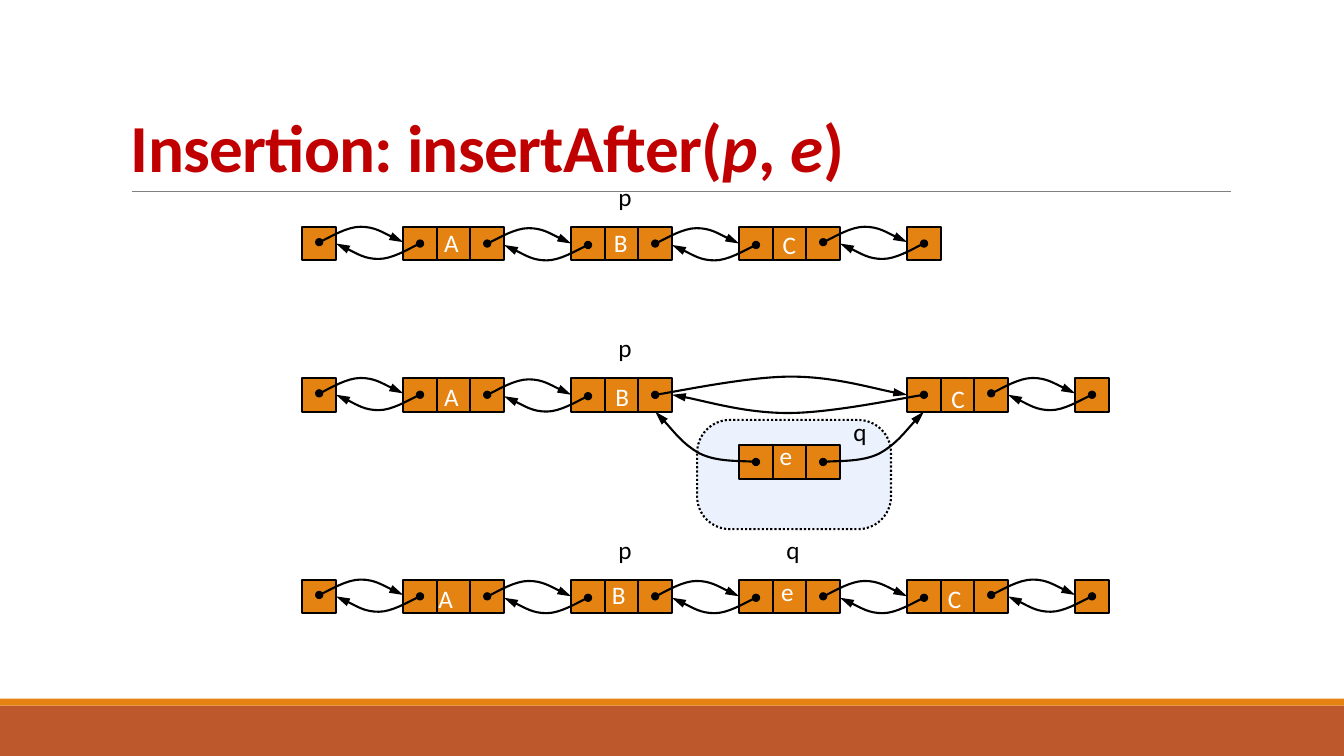
from lxml import etree
from pptx import Presentation
from pptx.dml.color import RGBColor
from pptx.enum import dml, shapes, text
from pptx.oxml import ns
from pptx.util import Pt

COLORS = {"red": "C00000", "orange": "E48312", "rust": "BD582C", "rule": "808080",
          "bubble": "ECF1FE", "black": "000000", "white": "FFFFFF"}
FONT = "Calibri"
CELL = 24
NODE = 3 * CELL
HEAD_LEFT = 216
GAP = 48

# Link curves as offsets from their start: two cubic segments each
HOP = [(5, -2), (20, -11), (29.5, -11), (39.5, -11), (54, -2.5), (60, 0)]
LONG_HOP = [(16.5, -2.5), (67, -13), (97, -13), (127, -13), (163, -2.5), (180, 0)]
NEW_LINK = [(6.5, -1), (28, 0), (40, -6), (52, -12.5), (65.5, -30), (72, -36)]

# Each row: top, nodes (letter, left, letter offset x, y), tail left, markers
ROWS = [
    (162, [("A", 288, 20, -3), ("B", 408, 21, -3.5), ("C", 528, 21.5, -1.5)],
     648, [("p", 432)]),
    (270, [("A", 288, 20, -1.5), ("B", 408, 22, -1.5), ("C", 648, 22, 0)],
     768, [("p", 432)]),
    (414, [("A", 288, 16, -1), ("B", 408, 19.5, -3.5), ("e", 528, 20, -6),
           ("C", 648, 19.5, -1)],
     768, [("p", 432), ("q", 552)]),
]
NEW_LEFT, NEW_TOP = 528, 318


def color(name):
    return RGBColor.from_string(COLORS[name])


def add_link(x, y, offsets, x_sign=1, y_sign=1):
    """Draw a curved arrow with a dot at its start."""
    points = [(Pt(x + x_sign * dx), Pt(y + y_sign * dy)) for dx, dy in offsets]
    builder = slide.shapes.build_freeform(Pt(x), Pt(y))
    builder.add_line_segments(points, close=False)
    link = builder.convert_to_shape()
    link.shadow.inherit = False
    link.fill.background()
    link.line.color.rgb = color("black")
    link.line.width = Pt(1.5)
    outline = link.line._get_or_add_ln()
    etree.SubElement(outline, ns.qn("a:headEnd"), type="oval")
    etree.SubElement(outline, ns.qn("a:tailEnd"), type="triangle", len="lg")
    # Turn every three straight segments into one cubic segment
    segments = link._element.xpath(".//a:lnTo")
    outline_path = segments[0].getparent()
    for first in range(0, len(segments), 3):
        cubic = etree.SubElement(outline_path, ns.qn("a:cubicBezTo"))
        for segment in segments[first:first + 3]:
            cubic.append(segment[0])
            outline_path.remove(segment)


deck = Presentation()
deck.slide_width, deck.slide_height = Pt(960), Pt(540)
slide = deck.slides.add_slide(deck.slide_layouts[6])

# Title and its rule
rule = slide.shapes.add_connector(
    shapes.MSO_CONNECTOR.STRAIGHT, Pt(94.3), Pt(136.8), Pt(879), Pt(136.8))
rule.line.color.rgb = color("rule")
rule.line.width = Pt(0.5)
etree.SubElement(rule._element.spPr, ns.qn("a:effectLst"))

title = slide.shapes.add_textbox(Pt(86.4), Pt(22.3), Pt(792), Pt(114.5))
title.text_frame.word_wrap = True
title.text_frame.vertical_anchor = text.MSO_ANCHOR.BOTTOM
heading = title.text_frame.paragraphs[0]
heading.line_spacing = 0.85
for words, italic in [("Insertion: insertAfter(", False), ("p", True), (", ", False),
                      ("e", True), (")", False)]:
    run = heading.add_run()
    run.text = words
    run.font.name, run.font.size = FONT, Pt(48)
    run.font.bold, run.font.italic = True, italic
    run.font.color.rgb = color("red")
    run.font._element.set("spc", "-50")

# Boxes: footer bars, bubble round the new node, list cells
RECT, ROUND = shapes.MSO_SHAPE.RECTANGLE, shapes.MSO_SHAPE.ROUNDED_RECTANGLE
boxes = [(RECT, 0, 504, 960, 36, "rust", False),
         (RECT, 0, 499, 960, 5, "orange", False),
         (ROUND, 498, 300, 138.5, 78, "bubble", True)]
cells = [(NEW_LEFT + i * CELL, NEW_TOP) for i in range(3)]
for top, nodes, tail_left, markers in ROWS:
    cells += [(HEAD_LEFT, top), (tail_left, top)]
    cells += [(left + i * CELL, top) for _, left, _, _ in nodes for i in range(3)]
boxes += [(RECT, left, top, CELL, CELL, "orange", True) for left, top in cells]

for kind, left, top, width, height, fill, outlined in boxes:
    box = slide.shapes.add_shape(kind, Pt(left), Pt(top), Pt(width), Pt(height))
    box.shadow.inherit = False
    box.fill.solid()
    box.fill.fore_color.rgb = color(fill)
    if outlined:
        box.line.color.rgb = color("black")
        box.line.width = Pt(1.5)
    else:
        box.line.fill.background()
    if kind == ROUND:
        box.adjustments[0] = 0.3
        box.line.dash_style = dml.MSO_LINE.ROUND_DOT

# Links between neighbours, forward and back
for top, nodes, tail_left, markers in ROWS:
    right = HEAD_LEFT + CELL
    for left in [node[1] for node in nodes] + [tail_left]:
        at_end = right == HEAD_LEFT + CELL or left == tail_left
        drop = 11 if at_end else 12
        curve = LONG_HOP if left - right > GAP else HOP
        add_link(right - CELL / 2, top + drop, curve)
        add_link(left + CELL / 2, top + drop + (curve is HOP), curve, -1, -1)
        right = left + NODE

# Links from the new node to its neighbours
for x, side in [(NEW_LEFT + CELL / 2, -1), (NEW_LEFT + NODE - CELL / 2, 1)]:
    add_link(x, NEW_TOP + CELL / 2, NEW_LINK, side)

# Letters in the nodes and position markers
labels = [("e", NEW_LEFT + 19, NEW_TOP - 7, "white"), ("q", 600, 294, "black")]
for top, nodes, tail_left, markers in ROWS:
    labels += [(letter, left + dx, top + dy, "white") for letter, left, dx, dy in nodes]
    labels += [(letter, left, top - 36, "black") for letter, left in markers]

for letter, left, top, ink in labels:
    label = slide.shapes.add_textbox(Pt(left), Pt(top), Pt(28.8), Pt(29))
    label.text_frame.word_wrap = True
    label.text_frame.auto_size = text.MSO_AUTO_SIZE.SHAPE_TO_FIT_TEXT
    line = label.text_frame.paragraphs[0]
    line.alignment = text.PP_ALIGN.CENTER
    run = line.add_run()
    run.text = letter
    run.font.name, run.font.size = FONT, Pt(18)
    run.font.color.rgb = color(ink)

deck.save("out.pptx")
